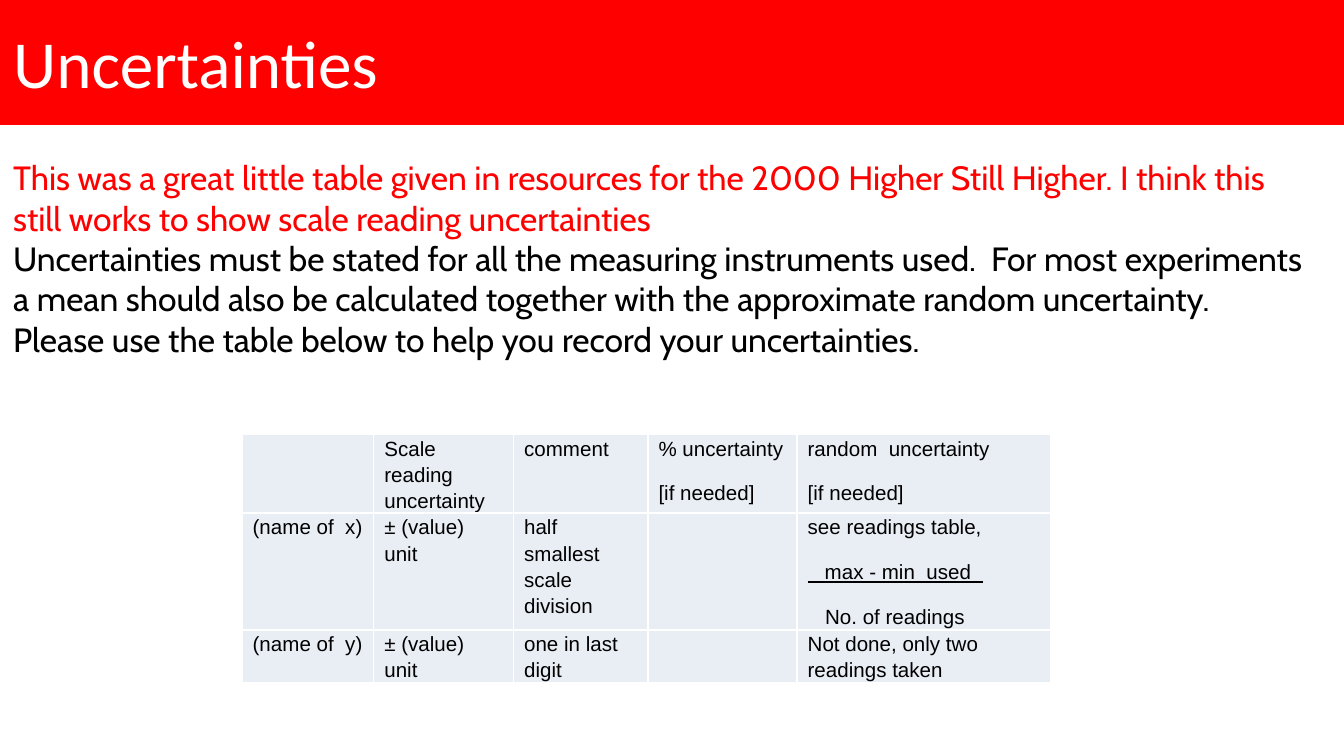
from pptx import Presentation
from pptx.dml.color import RGBColor
from pptx.enum.shapes import MSO_SHAPE
from pptx.enum.text import MSO_ANCHOR, PP_ALIGN
from pptx.oxml import parse_xml
from pptx.oxml.ns import nsdecls
from pptx.util import Inches, Pt

RED, BLACK, WHITE, PALE = "FF0000", "000000", "FFFFFF", "E9EDF4"
COLS = [0.98, 1.04, 1, 1.11, 1.89]
ROWS = [0.58, 0.87, 0.39]
BAR = "   max - min  used  "
COUNT = "No. of readings"
CELLS = [
    ["", "Scale reading uncertainty", "comment",
     "% uncertainty\n[if needed]", "random  uncertainty\n[if needed]"],
    ["(name of  x)", "± (value) unit", "half smallest scale division", "",
     f"see readings table,\n{BAR}\n{COUNT}"],
    ["(name of  y)", "± (value) unit", "one in last digit", "",
     "Not done, only two readings taken"],
]
BODY = [
    ("This was a great little table given in resources for the 2000 Higher "
     "Still Higher. I think this still works to show scale reading "
     "uncertainties", RED),
    ("Uncertainties must be stated for all the measuring instruments used.  "
     "For most experiments a mean should also be calculated together with "
     "the approximate random uncertainty.", BLACK),
    ("Please use the table below to help you record your uncertainties.",
     BLACK),
]


def color(code):
    return RGBColor.from_string(code)


class Deck:
    def __init__(self):
        self.prs = Presentation()
        self.prs.slide_width = Inches(10)
        self.prs.slide_height = Inches(10 * 9 / 16)
        self.slide = self.prs.slides.add_slide(self.prs.slide_layouts[6])

    def style(self, para, face, size, code):
        for run in para.runs:
            run.font.name = face
            run.font.size = Pt(size)
            run.font.color.rgb = color(code)

    def title(self, text, *box):
        shape = self.slide.shapes.add_shape(
            MSO_SHAPE.RECTANGLE, *map(Inches, box))
        shape.shadow.inherit = False
        shape.fill.solid()
        shape.fill.fore_color.rgb = color(RED)
        shape.line.fill.background()
        frame = shape.text_frame
        frame.text = text
        frame.vertical_anchor = MSO_ANCHOR.MIDDLE
        frame.paragraphs[0].alignment = PP_ALIGN.LEFT
        self.style(frame.paragraphs[0], "Calibri", 36, WHITE)

    def body(self, parts, *box):
        frame = self.slide.shapes.add_textbox(*map(Inches, box)).text_frame
        frame.word_wrap = True
        frame.vertical_anchor = MSO_ANCHOR.MIDDLE
        frame.text = "\n".join(text for text, code in parts)
        for para, (text, code) in zip(frame.paragraphs, parts):
            self.style(para, "Cabin", 18, code)

    def border(self, cell):
        props = cell._tc.get_or_add_tcPr()
        for spot, side in enumerate(("lnL", "lnR", "lnT", "lnB")):
            props.insert(spot, parse_xml(
                f'<a:{side} {nsdecls("a")} w="12700"><a:solidFill>'
                f'<a:srgbClr val="{WHITE}"/></a:solidFill></a:{side}>'))

    def cell(self, cell, text):
        cell.margin_left = cell.margin_right = Inches(0.08)
        cell.margin_top = cell.margin_bottom = 0
        cell.fill.solid()
        cell.fill.fore_color.rgb = color(PALE)
        self.border(cell)
        cell.text_frame.text = text
        for para in cell.text_frame.paragraphs:
            para.line_spacing = 1.15
            para.space_after = Pt(10)
            self.style(para, "Arial", 11, BLACK)
            if para.text == BAR:
                para.runs[0].font.underline = True
            elif para.text == COUNT:
                para._p.get_or_add_pPr().set("marL", str(Inches(0.13)))

    def table(self, cells, left, top):
        box = map(Inches, (left, top, sum(COLS), sum(ROWS)))
        table = self.slide.shapes.add_table(
            len(ROWS), len(COLS), *box).table
        table.first_row = table.horz_banding = False
        for col, width in zip(table.columns, COLS):
            col.width = Inches(width)
        for row, height, texts in zip(table.rows, ROWS, cells):
            row.height = Inches(height)
            for cell, text in zip(row.cells, texts):
                self.cell(cell, text)


def main():
    deck = Deck()
    deck.table(CELLS, 1.8, 3.23)
    deck.body(BODY, 0, 0.96, 9.83, 1.92)
    deck.title("Uncertainties", 0, -0.01, 10, 0.94)
    deck.prs.save("out.pptx")


if __name__ == "__main__":
    main()
